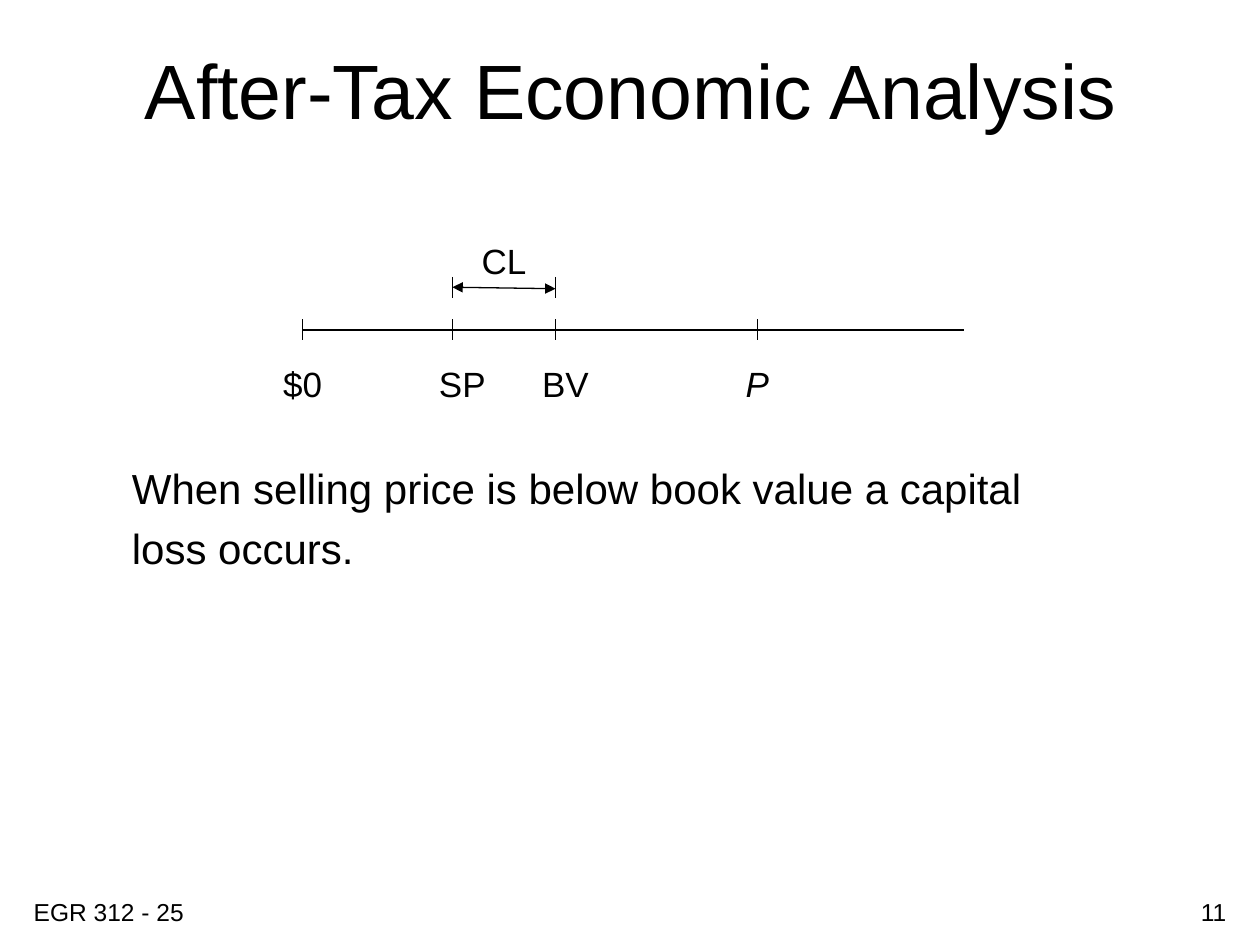
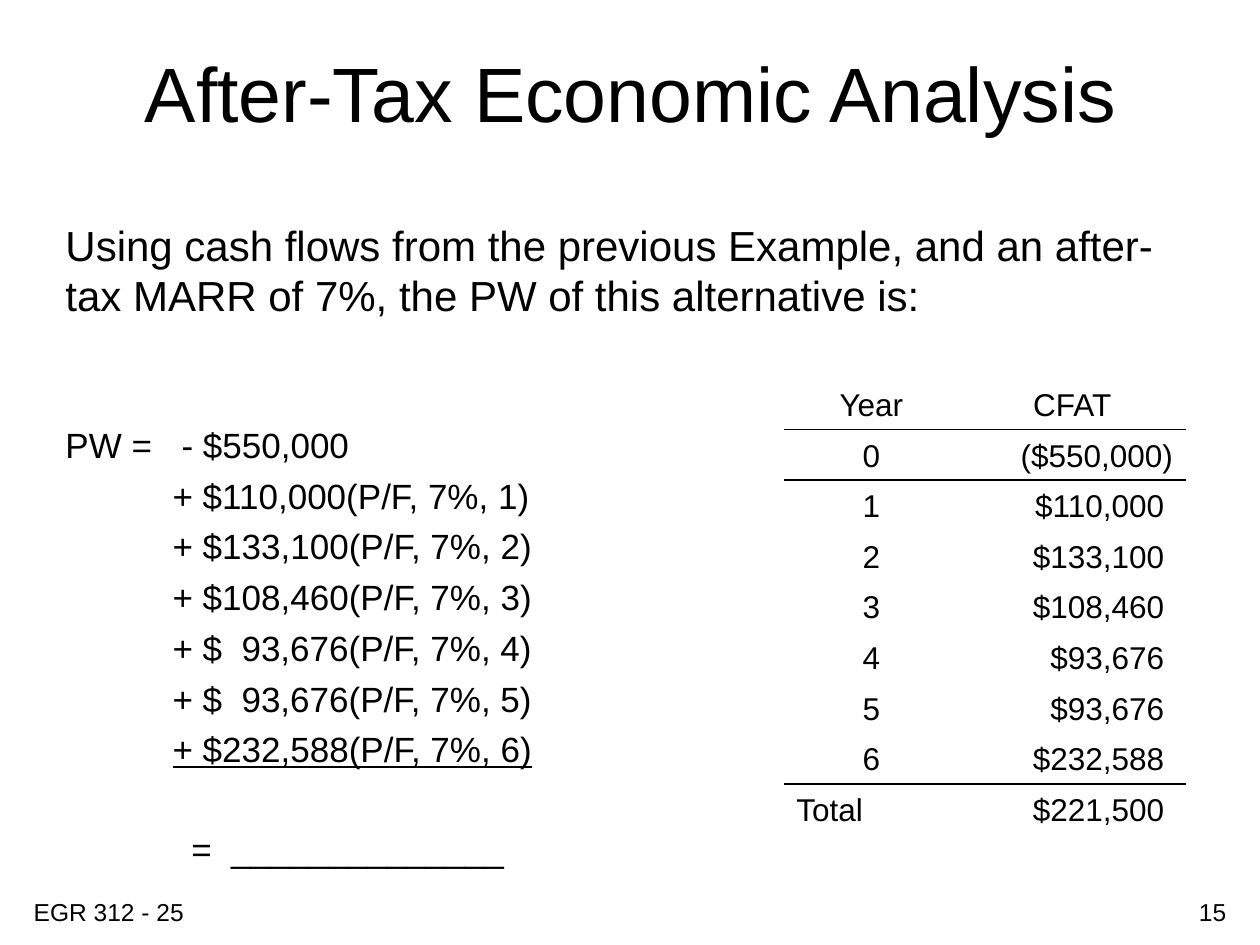
from dataclasses import dataclass

from lxml.etree import SubElement
from pptx import Presentation
from pptx.dml.color import RGBColor
from pptx.enum.shapes import MSO_CONNECTOR
from pptx.enum.text import MSO_ANCHOR, PP_ALIGN
from pptx.oxml import parse_xml
from pptx.oxml.ns import nsdecls, qn
from pptx.util import Cm, Pt


@dataclass(frozen=True)
class Theme:
    font: str = "Arial"
    ink: str = "000000"
    title: int = 44
    body: int = 24
    label: int = 20
    cell: int = 18
    foot: int = 14
    rule: float = 0.75
    border: float = 1


THEME = Theme()
LEFT, MID, RIGHT = PP_ALIGN.LEFT, PP_ALIGN.CENTER, PP_ALIGN.RIGHT


def add_run(para, text, size, italic=False, under=False):
    run = para.add_run()
    run.text = text
    font = run.font
    font.name, font.size = THEME.font, Pt(size)
    font.color.rgb = RGBColor.from_string(THEME.ink)
    if italic:
        font.italic = True
    if under:
        font.underline = True


def add_text(slide, box, lines, size, align=LEFT, gap=0, anchor=MSO_ANCHOR.TOP, italic=False):
    """Add a text box at box (left, top, width, height in cm), one paragraph a line."""
    frame = slide.shapes.add_textbox(*map(Cm, box)).text_frame
    frame.word_wrap = True
    frame.vertical_anchor = anchor
    for i, line in enumerate(lines):
        para = frame.add_paragraph() if i else frame.paragraphs[0]
        para.alignment = align
        if i and gap:
            para.space_before = Pt(gap)
        add_run(para, line, size, italic)
    return frame


def add_line(slide, x1, y1, x2, y2, arrows=False):
    line = slide.shapes.add_connector(MSO_CONNECTOR.STRAIGHT, Cm(x1), Cm(y1), Cm(x2), Cm(y2))
    line.line.color.rgb = RGBColor.from_string(THEME.ink)
    line.line.width = Pt(THEME.rule)
    if arrows:
        stroke = line.line._get_or_add_ln()
        for end in ("a:headEnd", "a:tailEnd"):
            SubElement(stroke, qn(end), type="triangle")
    SubElement(line._element.spPr, qn("a:effectLst"))


def add_tick(slide, x, y, half=0.21):
    add_line(slide, x, y - half, x, y + half)


def add_frame(deck, page, top):
    """Add a slide with the shared title and footers."""
    slide = deck.slides.add_slide(deck.slide_layouts[6])
    add_text(slide, (1.92, top, 21.6, 2), ["After-Tax Economic Analysis"],
             THEME.title, MID, anchor=MSO_ANCHOR.MIDDLE)
    add_text(slide, (0.43, 17.96, 5.28, 0.69), ["EGR 312 - 25"], THEME.foot)
    add_text(slide, (19.69, 17.96, 5.28, 0.69), [page], THEME.foot, RIGHT)
    return slide


def add_scale(slide, left, top, width):
    """Draw the value axis with its ticks, labels and the capital loss span."""
    axis, span, half = top + 2.03, top + 1.17, 1
    add_line(slide, left, axis, left + width, axis)
    # label, tick offset, label shift
    marks = [("$0", 0, 0), ("SP", 3.02, 0.2), ("BV", 5.1, 0.2), ("P", 9.17, 0)]
    for name, step, shift in marks:
        x = left + step
        add_tick(slide, x, axis)
        add_text(slide, (x + shift - half, axis + 0.54, 2 * half, 1.09),
                 [name], THEME.label, MID, italic=name == "P")
    low, high = (left + step for _, step, _ in marks[1:3])
    for x in (low, high):
        add_tick(slide, x, span)
    add_line(slide, low, span, high, span + 0.03, arrows=True)
    add_text(slide, ((low + high) / 2 - half, top + 0.08, 2 * half, 1.09),
             ["CL"], THEME.label, MID)


def set_stops(para, stops):
    tabs = SubElement(para._p.get_or_add_pPr(), qn("a:tabLst"))
    for stop in stops:
        SubElement(tabs, qn("a:tab"), pos=str(Cm(stop)), algn="l")


def add_worth(slide, box, flows):
    """Write the present worth sum, with tab stops for signs and figures."""
    sign, digit = 2.16, 3.55
    rows = [("PW =\t- $550,000", (2.34,))]
    for year, flow in enumerate(flows, 1):
        cash = f"$\t{flow}" if len(flow) < 7 else f"${flow}"
        rows.append((f"\t+ {cash}(P/F, 7%, {year})", (sign, digit)))
    rows.append(("\t=\t" + "_" * 14, (2.54, 3.34)))
    frame = add_text(slide, box, [], THEME.label)
    for i, (text, stops) in enumerate(rows):
        para = frame.add_paragraph() if i else frame.paragraphs[0]
        if i:
            para.space_before = Pt(33 if i == len(rows) - 1 else 5)
        set_stops(para, stops)
        add_run(para, text, THEME.label, under=i == len(flows))


def add_edge(cell, side):
    edge = parse_xml(
        f'<a:{side} {nsdecls("a")} w="{Pt(THEME.border)}"><a:solidFill>'
        f'<a:srgbClr val="{THEME.ink}"/></a:solidFill></a:{side}>')
    cell._tc.get_or_add_tcPr().insert(0, edge)


def add_flows(slide, left, top, flows):
    rows = [("Year", "CFAT"), ("0", "($550,000)")]
    rows += [(str(year), f"${flow} ") for year, flow in enumerate(flows, 1)]
    rows.append(("Total", "$221,500 "))
    last = len(rows) - 1
    widths, high = (3.53, 4.57), 1.02
    table = slide.shapes.add_table(len(rows), 2, Cm(left), Cm(top),
                                   Cm(sum(widths)), Cm(high * len(rows))).table
    table.first_row = table.horz_banding = False
    style = table._tbl.tblPr.find(qn("a:tableStyleId"))
    style.text = "{2D5ABB26-0587-4C30-8999-92F81FD0307C}"
    for col, width in zip(table.columns, widths):
        col.width = Cm(width)
    for r, row in enumerate(rows):
        table.rows[r].height = Cm(high if r else 1.07)
        for c, text in enumerate(row):
            cell = table.cell(r, c)
            cell.fill.background()
            cell.vertical_anchor = MSO_ANCHOR.BOTTOM
            para = cell.text_frame.paragraphs[0]
            para.alignment = RIGHT if c and r else LEFT if r == last else MID
            add_run(para, text, THEME.cell)
            if r in (0, last - 1):
                add_edge(cell, "lnB")
            if r in (1, last):
                add_edge(cell, "lnT")


def add_loss(deck):
    slide = add_frame(deck, "11", 0.79)
    add_scale(slide, 6.1, 4.62, 13.33)
    add_text(slide, (2.41, 9.19, 19.5, 2.49),
             ["When selling price is below book value a capital", "loss occurs."],
             THEME.body, gap=6)


def add_present(deck):
    slide = add_frame(deck, "15", 0.85)
    flows = ["110,000", "133,100", "108,460", "93,676", "93,676", "232,588"]
    add_text(slide, (1.07, 4.3, 23.27, 2.3),
             ["Using cash flows from the previous Example, and an after-tax MARR of 7%, "
              "the PW of this alternative is:"], THEME.body)
    add_worth(slide, (1.07, 8.41, 12, 9.3), flows)
    add_flows(slide, 15.8, 7.59, flows)


def main():
    deck = Presentation()
    deck.slide_width, deck.slide_height = Cm(25.4), Cm(19.05)
    add_loss(deck)
    add_present(deck)
    deck.save("out.pptx")


if __name__ == "__main__":
    main()
